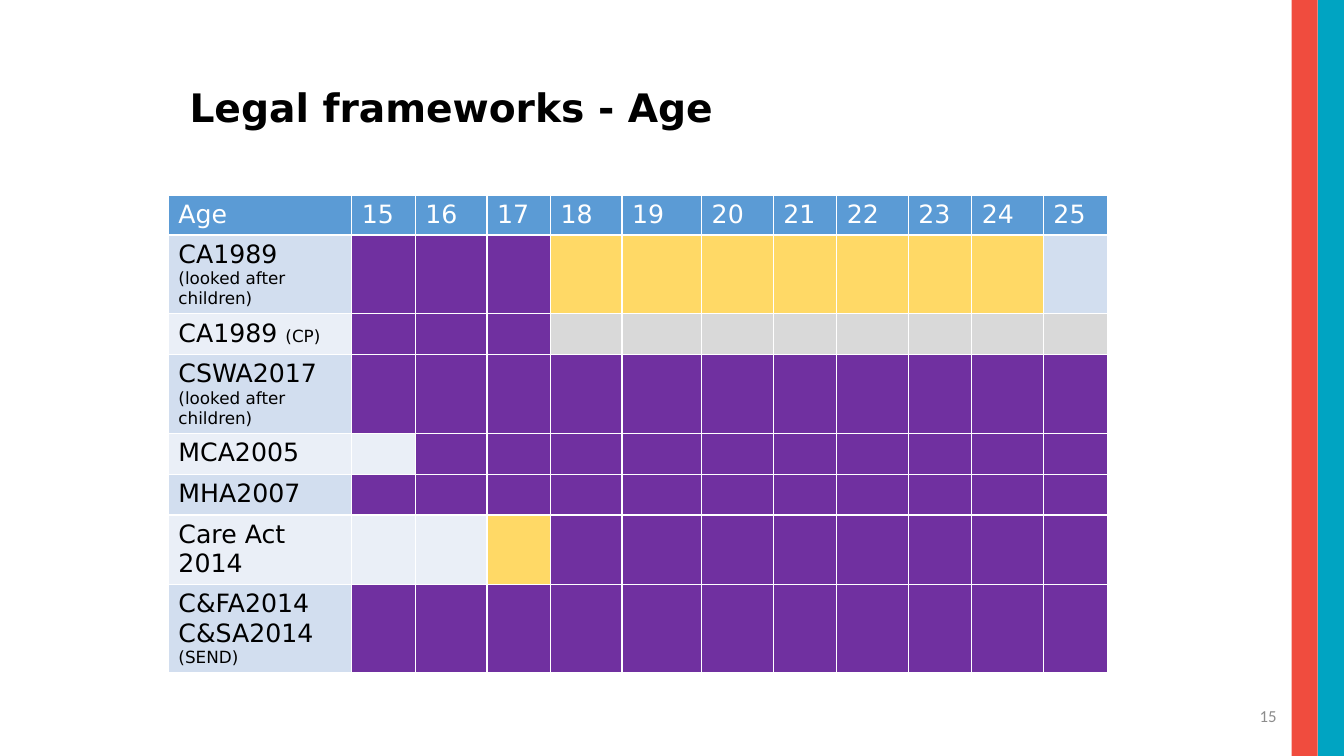
"""Build the slide that sets legal frameworks against ages 15 to 25."""
from pptx import Presentation
from pptx.dml.color import RGBColor
from pptx.enum.shapes import MSO_SHAPE
from pptx.enum.text import MSO_ANCHOR, PP_ALIGN
from pptx.util import Inches, Pt

RECT = MSO_SHAPE.RECTANGLE
MIDDLE = MSO_ANCHOR.MIDDLE
LEFT, RIGHT = PP_ALIGN.LEFT, PP_ALIGN.RIGHT

W, H = 13.33, 7.5
FONT = "DejaVu Sans"
HEADER = "5B9BD5"
BANDS = ("D2DEEF", "EAEFF7")
FILLS = {"P": "7030A0", "Y": "FFD966", "G": "D9D9D9"}
STRIPES = ("00A4C2", "F04C3E")
STRIPE_W = 0.26

TITLE = "Legal frameworks - Age"
PAGE = "15"
AGES = range(15, 26)
LARGE, SMALL = 18, 12
FRAMEWORKS = [
    ([[("CA1989", LARGE)], [("(looked after children)", SMALL)]], "PPPYYYYYYY-", 0.78),
    ([[("CA1989 ", LARGE), ("(CP)", SMALL)]], "PPPGGGGGGGG", 0.4),
    ([[("CSWA2017", LARGE)], [("(looked after children)", SMALL)]], "PPPPPPPPPPP", 0.78),
    ([[("MCA2005", LARGE)]], "-PPPPPPPPPP", 0.4),
    ([[("MHA2007", LARGE)]], "PPPPPPPPPPP", 0.4),
    ([[("Care Act 2014", LARGE)]], "--YPPPPPPPP", 0.69),
    ([[("C&FA2014", LARGE)], [("C&SA2014", LARGE)], [("(SEND)", SMALL)]], "PPPPPPPPPPP", 0.87),
]
COLS = [1.82, 0.63, 0.71, 0.63, 0.71, 0.79, 0.71, 0.63, 0.71, 0.63, 0.71, 0.64]
ROWS = [0.39] + [height for _, _, height in FRAMEWORKS]


def rgb(value):
    return RGBColor.from_string(value)


def write(tf, paragraphs, color="000000", font=FONT, bold=False, align=LEFT, spacing=None):
    for i, runs in enumerate(paragraphs):
        p = tf.paragraphs[0] if i == 0 else tf.add_paragraph()
        p.alignment = align
        p.line_spacing = spacing
        for text, size in runs:
            r = p.add_run()
            r.text = text
            r.font.size = Pt(size)
            r.font.name = font
            r.font.bold = bold
            r.font.color.rgb = rgb(color)


def fill(cell, color):
    cell.fill.solid()
    cell.fill.fore_color.rgb = rgb(color)


def add_stripes(s):
    for i, color in enumerate(STRIPES, 1):
        sp = s.shapes.add_shape(RECT, Inches(W - i * STRIPE_W), 0, Inches(STRIPE_W), Inches(H))
        sp.shadow.inherit = False
        sp.fill.solid()
        sp.fill.fore_color.rgb = rgb(color)
        sp.line.fill.background()


def add_title(s):
    sp = s.shapes.title
    sp.left, sp.top, sp.width, sp.height = map(Inches, (1.78, 0.64, 9.13, 0.9))
    sp.text_frame.vertical_anchor = MIDDLE
    write(sp.text_frame, [[(TITLE, 28)]], bold=True, spacing=0.9)


def add_age_table(s):
    box = map(Inches, (1.67, 1.94, sum(COLS), sum(ROWS)))
    table = s.shapes.add_table(len(ROWS), len(COLS), *box).table
    for column, width in zip(table.columns, COLS):
        column.width = Inches(width)
    for row, height in zip(table.rows, ROWS):
        row.height = Inches(height)
    for c, text in enumerate(["Age", *map(str, AGES)]):
        fill(table.cell(0, c), HEADER)
        write(table.cell(0, c).text_frame, [[(text, LARGE)]], color="FFFFFF")
    for r, (name, marks, _) in enumerate(FRAMEWORKS, 1):
        band = BANDS[(r - 1) % 2]
        fill(table.cell(r, 0), band)
        write(table.cell(r, 0).text_frame, name)
        for c, mark in enumerate(marks, 1):
            fill(table.cell(r, c), FILLS.get(mark, band))


def add_page_number(s):
    tf = s.shapes.add_textbox(*map(Inches, (9.65, 6.9, 3.11, 0.4))).text_frame
    tf.word_wrap = True
    tf.vertical_anchor = MIDDLE
    write(tf, [[(PAGE, 12)]], color="8C8C8C", font="Calibri", align=RIGHT)


def main():
    prs = Presentation()
    prs.slide_width, prs.slide_height = Inches(W), Inches(H)
    s = prs.slides.add_slide(prs.slide_layouts[5])
    add_stripes(s)
    add_title(s)
    add_age_table(s)
    add_page_number(s)
    prs.save("out.pptx")


if __name__ == "__main__":
    main()
